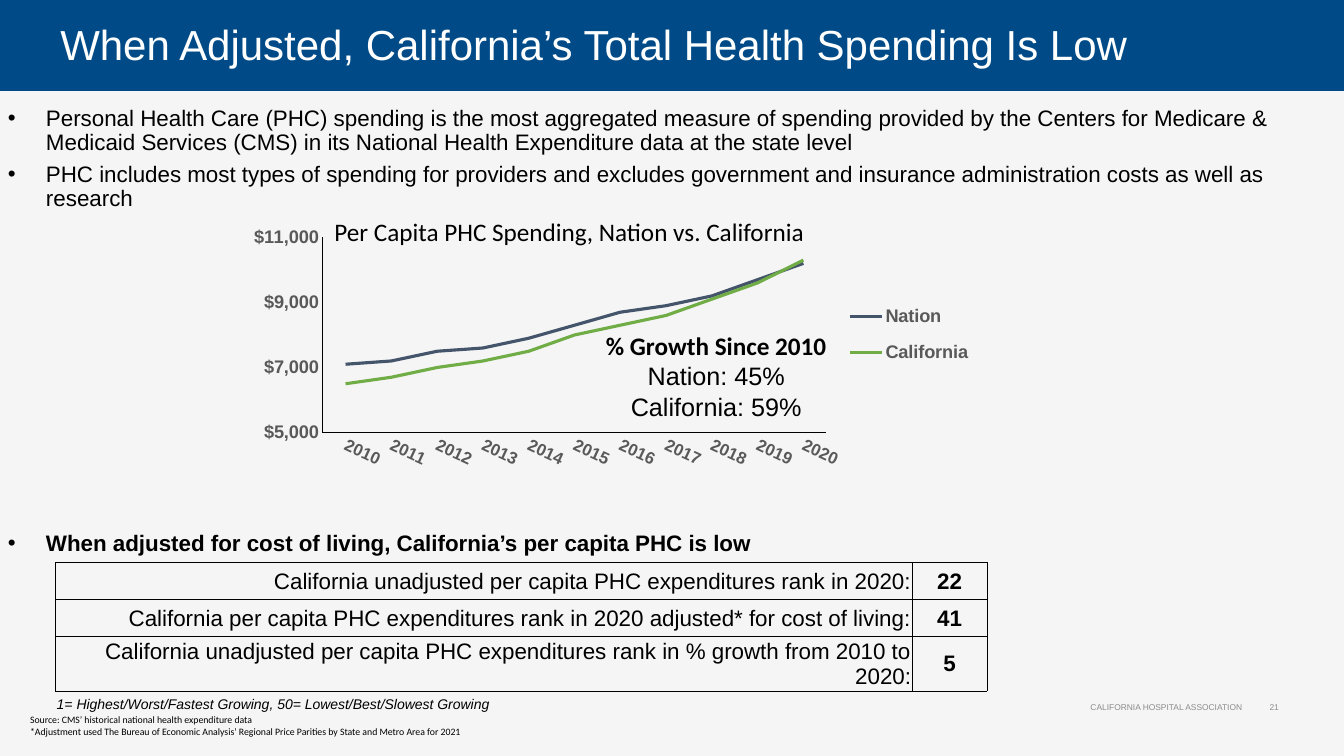
from lxml import etree
from pptx import Presentation
from pptx.chart.data import CategoryChartData
from pptx.dml.color import RGBColor
from pptx.enum.chart import XL_CHART_TYPE as ChartType, XL_LEGEND_POSITION as LegendPos, XL_TICK_MARK as Tick
from pptx.enum.shapes import MSO_SHAPE as Shape
from pptx.enum.text import MSO_ANCHOR as Anchor, PP_ALIGN as Align
from pptx.oxml import parse_xml
from pptx.oxml.ns import nsdecls, qn
from pptx.util import Cm, Pt

COLORS = {
    "page": "F5F5F5", "banner": "004B87", "white": "FFFFFF", "black": "000000",
    "footer": "8C8C8C", "label": "595959", "nation": "44546A", "california": "70AD47",
}
SLIDE_W, SLIDE_H = 33.87, 19.05


def color(name):
    return RGBColor.from_string(COLORS[name])


def style_font(font, size, ink="black", face="Arial", bold=False, italic=False):
    font.size, font.name, font.bold, font.italic = Pt(size), face, bold, italic
    font.color.rgb = color(ink)


def add_band(slide, left, top, width, height, fill):
    band = slide.shapes.add_shape(Shape.RECTANGLE, Cm(left), Cm(top), Cm(width), Cm(height))
    band.shadow.inherit = False
    band.fill.solid()
    band.fill.fore_color.rgb = color(fill)
    band.line.fill.background()


def add_text(slide, box, lines, size, align=Align.LEFT, anchor=Anchor.TOP,
             insets=(0.25, 0.13, 0.25, 0.13), wrap=True, **font):
    frame = slide.shapes.add_textbox(*map(Cm, box)).text_frame
    frame.word_wrap, frame.vertical_anchor = wrap, anchor
    (frame.margin_left, frame.margin_top,
     frame.margin_right, frame.margin_bottom) = map(Cm, insets)
    frame.text = "\n".join(lines)
    for paragraph in frame.paragraphs:
        paragraph.alignment = align
        style_font(paragraph.runs[0].font, size, **font)
    return frame


def add_header(slide, width, height):
    add_band(slide, 0, 0, width, height, "banner")
    title = add_text(slide, (0, 0.05, width, height - 0.05),
                     ["When Adjusted, California’s Total Health Spending Is Low"], 30,
                     anchor=Anchor.MIDDLE, insets=(1.52, 0.25, 0.25, 0.25), ink="white")
    title.paragraphs[0].line_spacing = 0.9


def add_bullets(slide, box, lines, bold=False):
    frame = add_text(slide, box, lines, 16, insets=(0, 0, 0.25, 0.13), bold=bold)
    for paragraph in frame.paragraphs:
        properties = paragraph._p.get_or_add_pPr()
        properties.set("marL", str(Cm(0.96)))
        properties.set("indent", str(-Cm(0.96)))
        etree.SubElement(properties, qn("a:buFont")).set("typeface", "Arial")
        etree.SubElement(properties, qn("a:buChar")).set("char", "•")
        paragraph.line_spacing = 0.9
        paragraph.space_after = Pt(6)


def set_layout(part, before, **fractions):
    """Fix a chart part's place as fractions of the chart."""
    for old in part.findall(qn("c:layout")):
        part.remove(old)
    target = '<c:layoutTarget val="inner"/>' if before is None else ""
    values = "".join(f'<c:{key} val="{value}"/>' for key, value in fractions.items())
    layout = parse_xml(f'<c:layout {nsdecls("c")}><c:manualLayout>{target}'
                       f'<c:xMode val="edge"/><c:yMode val="edge"/>{values}'
                       '</c:manualLayout></c:layout>')
    if before is None:
        part.insert(0, layout)
    else:
        part.find(qn(before)).addprevious(layout)


def add_spending_chart(slide, left, top, width, height):
    spending = CategoryChartData()
    spending.categories = [str(year) for year in range(2010, 2021)]
    spending.add_series("Nation", (7100, 7200, 7500, 7600, 7900, 8300, 8700, 8900, 9200, 9700, 10200))
    spending.add_series("California", (6500, 6700, 7000, 7200, 7500, 8000, 8300, 8600, 9100, 9600, 10300))
    chart = slide.shapes.add_chart(ChartType.LINE, Cm(left), Cm(top), Cm(width), Cm(height),
                                   spending).chart
    style_font(chart.font, 10, face="Calibri")
    chart.has_title = False
    plot = chart.plots[0]
    plot.vary_by_categories = False
    for series, ink in zip(plot.series, ("nation", "california")):
        series.smooth = False
        series.format.line.color.rgb = color(ink)
        series.format.line.width = Pt(2.25)

    # Axes
    years, dollars = chart.category_axis, chart.value_axis
    for axis, size in ((years, 12), (dollars, 13)):
        axis.major_tick_mark = axis.minor_tick_mark = Tick.NONE
        axis.has_major_gridlines = False
        style_font(axis.tick_labels.font, size, "label", bold=True)
        axis.format.line.color.rgb = color("black")
        axis.format.line.width = Pt(0.75)
    dollars.minimum_scale, dollars.maximum_scale, dollars.major_unit = 5000, 11000, 2000
    dollars.tick_labels.number_format = '"$"#,##0'
    dollars.tick_labels.number_format_is_linked = False
    years._element.find(qn("c:txPr")).find(qn("a:bodyPr")).set("rot", "1500000")

    # Legend and plot area
    chart.has_legend = True
    legend = chart.legend
    legend.position, legend.include_in_layout = LegendPos.RIGHT, False
    style_font(legend.font, 13, "label", bold=True)
    set_layout(legend._element, "c:overlay", x=0.78, y=0.25, w=0.17, h=0.33)
    set_layout(chart._chartSpace.chart.plotArea, None, x=0.127, y=0.051, w=0.634, h=0.731)

    # Captions over the plot
    add_text(slide, (left + 2.59, top - 0.33, 12.65, 1.02),
             ["Per Capita PHC Spending, Nation vs. California"], 18, wrap=False, face="Calibri")
    growth = add_text(slide, (left + 9.12, top + 2.56, 6.68, 2.57),
                      ["% Growth Since 2010", "Nation: 45%", "California: 59%"], 18,
                      align=Align.CENTER)
    style_font(growth.paragraphs[0].runs[0].font, 18, face="Calibri", bold=True)


def set_borders(cell, visible):
    properties = cell._tc.get_or_add_tcPr()
    for position, side in enumerate(("L", "R", "T", "B")):
        paint = (f'<a:solidFill><a:srgbClr val="{COLORS["black"]}"/></a:solidFill>'
                 if side in visible else "<a:noFill/>")
        properties.insert(position, parse_xml(
            f'<a:ln{side} {nsdecls("a")} w="{Pt(0.5)}">{paint}</a:ln{side}>'))


def add_rank_table(slide, left, top):
    ranks = [
        ("California unadjusted per capita PHC expenditures rank in 2020:", "22"),
        ("California per capita PHC expenditures rank in 2020 adjusted* for cost of living:", "41"),
        ("California unadjusted per capita PHC expenditures rank in % growth from 2010 to 2020:", "5"),
        ("1= Highest/Worst/Fastest Growing, 50= Lowest/Best/Slowest Growing", ""),
    ]
    widths, heights = (21.59, 1.88), (0.93, 0.93, 1.37, 0.64)
    table = slide.shapes.add_table(len(ranks), 2, Cm(left), Cm(top),
                                   Cm(sum(widths)), Cm(sum(heights))).table
    table.first_row = table.horz_banding = False
    for column, width in zip(table.columns, widths):
        column.width = Cm(width)
    for r, (texts, height) in enumerate(zip(ranks, heights)):
        table.rows[r].height = Cm(height)
        is_key = r == len(ranks) - 1
        for c, text in enumerate(texts):
            cell = table.cell(r, c)
            cell.fill.background()
            cell.vertical_anchor = Anchor.MIDDLE
            cell.margin_left = cell.margin_right = cell.margin_top = Cm(0.03)
            cell.margin_bottom = 0
            cell.text = text
            paragraph = cell.text_frame.paragraphs[0]
            paragraph.alignment = Align.LEFT if is_key else (Align.RIGHT, Align.CENTER)[c]
            font = paragraph.runs[0].font if text else paragraph.font
            style_font(font, 10 if is_key else 16, bold=c == 1 and not is_key, italic=is_key)
            set_borders(cell, "T" if is_key else "LRTB")


def add_footer(slide, top):
    add_text(slide, (0.51, top + 0.56, 11.73, 0.86), [
        "Source: CMS’ historical national health expenditure data",
        "*Adjustment used The Bureau of Economic Analysis’ Regional Price Parities by State and Metro Area for 2021",
    ], 7, wrap=False, face="Calibri")
    for left, width, text in ((11.23, 20.32, "CALIFORNIA HOSPITAL ASSOCIATION"), (31.62, 0.86, "21")):
        add_text(slide, (left, top, width, 1.02), [text], 6, align=Align.RIGHT,
                 anchor=Anchor.MIDDLE, ink="footer")


def main():
    deck = Presentation()
    deck.slide_width, deck.slide_height = Cm(SLIDE_W), Cm(SLIDE_H)
    slide = deck.slides.add_slide(deck.slide_layouts[6])
    add_band(slide, 0, 1.73, SLIDE_W, SLIDE_H - 1.73, "page")
    add_header(slide, SLIDE_W, 2.29)
    add_footer(slide, 17.3)
    add_bullets(slide, (0.2, 2.69, 32.77, 2.7), [
        "Personal Health Care (PHC) spending is the most aggregated measure of spending provided by the Centers for Medicare & Medicaid Services (CMS) in its National Health Expenditure data at the state level",
        "PHC includes most types of spending for providers and excludes government and insurance administration costs as well as research",
    ])
    add_spending_chart(slide, 5.59, 5.64, 20.02, 6.73)
    add_bullets(slide, (0.2, 13.4, 32.77, 0.7),
                ["When adjusted for cost of living, California’s per capita PHC is low"], bold=True)
    add_rank_table(slide, 1.4, 14.17)
    deck.save("out.pptx")


if __name__ == "__main__":
    main()
